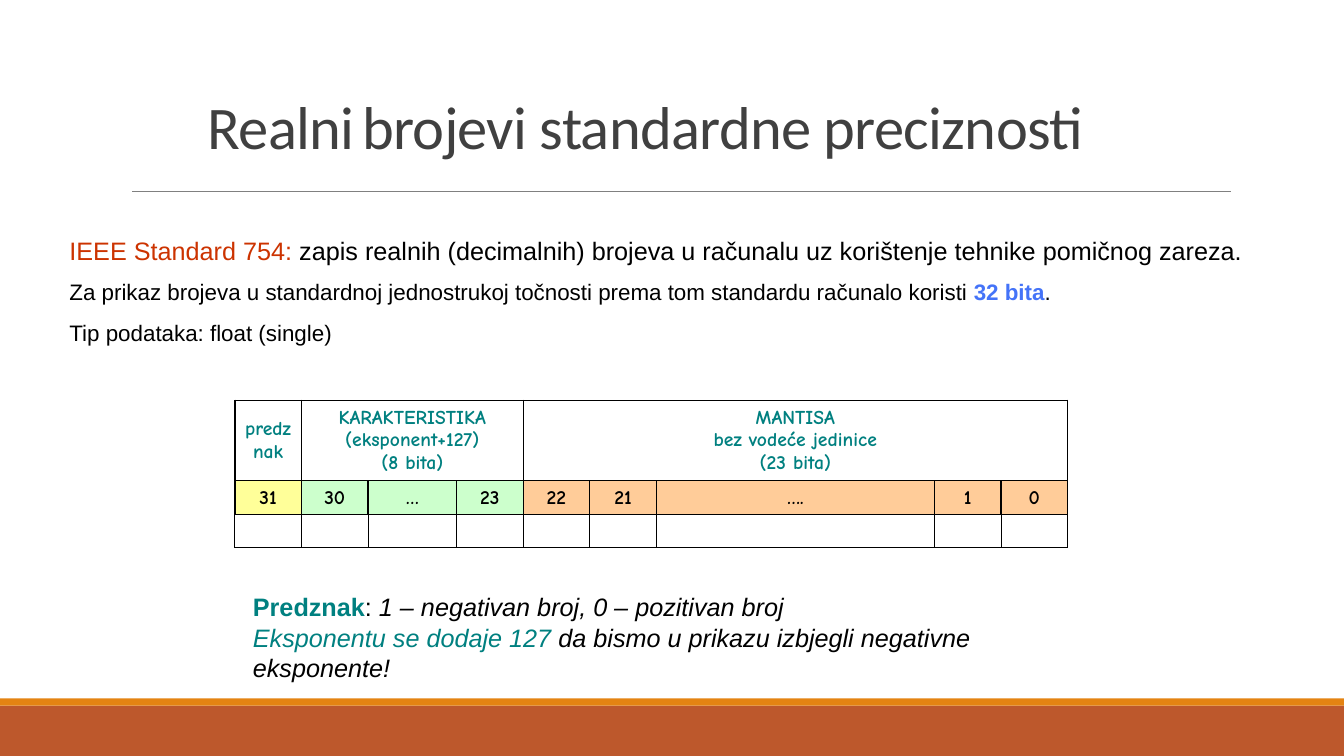
from lxml.etree import SubElement
from pptx import Presentation
from pptx.dml.color import RGBColor
from pptx.enum.shapes import MSO_CONNECTOR as Connector, MSO_SHAPE as Shape
from pptx.enum.text import MSO_ANCHOR as Anchor, MSO_AUTO_SIZE as AutoSize, PP_ALIGN as Align
from pptx.oxml.ns import qn
from pptx.util import Inches, Pt

COLORS = {
    "rust": "BD582C", "orange": "E48312", "rule": "808080", "title": "404040",
    "black": "000000", "red": "CC3300", "blue": "4473F8", "teal": "008080",
    "sign": "FFFF99", "exponent": "CCFFCC", "mantissa": "FFCC99",
}


def rgb(name):
    """Look up a named colour."""
    return RGBColor.from_string(COLORS[name])


def add_run(paragraph, text, size=18, color="black", font="Arial", bold=False, italic=False, spacing=None):
    """Append formatted text to a paragraph."""
    run = paragraph.add_run()
    run.text = text
    run.font.size, run.font.name = Pt(size), font
    run.font.bold, run.font.italic = bold, italic
    run.font.color.rgb = rgb(color)
    if spacing is not None:
        run._r.get_or_add_rPr().set("spc", str(round(spacing * 100)))


class SlideBuilder:
    """Holds the current slide and its style."""

    def __init__(self, slide):
        """Keep the slide to draw on."""
        self.slide = slide

    def fill_text(self, frame, paragraphs, align=Align.LEFT, line_spacing=None):
        """Write paragraphs, each a list of (text, format) pairs."""
        for index, runs in enumerate(paragraphs):
            paragraph = frame.add_paragraph() if index else frame.paragraphs[0]
            paragraph.alignment = align
            if line_spacing:
                paragraph.line_spacing = line_spacing
            for text, style in runs:
                add_run(paragraph, text, **style)

    def title(self, box, runs):
        """Place and fill the title placeholder."""
        heading = self.slide.shapes.title
        heading.left, heading.top, heading.width, heading.height = map(Inches, box)
        frame = heading.text_frame
        frame.auto_size, frame.vertical_anchor = AutoSize.NONE, Anchor.BOTTOM
        self.fill_text(frame, [runs], line_spacing=0.85)

    def text(self, box, paragraphs, **layout):
        """Add a wrapped text box."""
        frame = self.slide.shapes.add_textbox(*map(Inches, box)).text_frame
        frame.word_wrap, frame.vertical_anchor = True, Anchor.TOP
        frame.margin_top = Inches(0.09)
        self.fill_text(frame, paragraphs, **layout)

    def bar(self, top, height, color):
        """Add a band across the full slide width."""
        band = self.slide.shapes.add_shape(Shape.RECTANGLE, 0, Inches(top), Inches(13.33), Inches(height))
        band.shadow.inherit = False
        band.fill.solid()
        band.fill.fore_color.rgb = rgb(color)
        band.line.fill.background()

    def rule(self, left, right, top):
        """Add a thin horizontal line."""
        line = self.slide.shapes.add_connector(
            Connector.STRAIGHT, Inches(left), Inches(top), Inches(right), Inches(top))
        line.line.color.rgb, line.line.width = rgb("rule"), Pt(0.5)
        SubElement(line._element.spPr, qn("a:effectLst"))

    def table(self, box, widths, heights):
        """Add a plain table with black borders."""
        frame = self.slide.shapes.add_table(len(heights), len(widths), *map(Inches, box))
        grid = frame.table
        grid.first_row = grid.horz_banding = False
        for column, width in zip(grid.columns, widths):
            column.width = Inches(width)
        for row, height in zip(grid.rows, heights):
            row.height = Inches(height)
        for row_index in range(len(heights)):
            for column_index in range(len(widths)):
                cell = grid.cell(row_index, column_index)
                self.border(cell, 0.75 if row_index == 2 else 1)
                cell.fill.background()
                cell.vertical_anchor = Anchor.MIDDLE
        return grid

    def border(self, cell, width):
        """Draw all four sides of a cell."""
        properties = cell._tc.get_or_add_tcPr()
        for side in ("a:lnL", "a:lnR", "a:lnT", "a:lnB"):
            line = SubElement(properties, qn(side), w=str(Pt(width)))
            SubElement(SubElement(line, qn("a:solidFill")), qn("a:srgbClr"), val=COLORS["black"])

    def cell(self, cell, lines, text_color="black", fill=None):
        """Write centred lines into a table cell."""
        style = {"size": 14, "font": "Comic Neue", "color": text_color, "bold": True}
        self.fill_text(cell.text_frame, [[(line, style)] for line in lines], Align.CENTER)
        if fill:
            cell.fill.solid()
            cell.fill.fore_color.rgb = rgb(fill)


def main():
    """Build and save the slide."""
    deck = Presentation()
    deck.slide_width, deck.slide_height = Inches(13.33), Inches(7.5)
    page = SlideBuilder(deck.slides.add_slide(deck.slide_layouts[5]))

    page.bar(7, 0.5, "rust")
    page.bar(6.93, 0.07, "orange")
    page.rule(1.31, 12.21, 1.9)

    heading = {"size": 43.2, "font": "Calibri", "color": "title", "spacing": -0.5}
    page.title((1.96, 0.58, 9.25, 1.08), [
        ("Realni", heading),
        (" ", {**heading, "size": 25.2}),
        ("brojevi standardne preciznosti", heading),
    ])

    page.text((0.59, 2.09, 11.99, 1.77), [
        [("IEEE Standard 754: ", {"color": "red"}),
         ("zapis realnih (decimalnih) brojeva u računalu uz korištenje tehnike pomičnog zareza.", {})],
        [("Za prikaz brojeva u standardnoj jednostrukoj točnosti prema tom standardu računalo koristi ",
          {"size": 16}),
         ("32 bita", {"size": 16, "color": "blue", "bold": True}),
         (".", {"size": 16})],
        [("Tip podataka: float (single)", {"size": 16})],
    ], line_spacing=1.5)

    widths = [0.66, 0.66, 0.88, 0.66, 0.66, 0.66, 2.76, 0.66, 0.66]
    bits = page.table((2.33, 3.97, 8.27, 1.47), widths, [0.8, 0.33, 0.33])
    fields = [
        ("sign", ["predznak"], ["31"]),
        ("exponent", ["KARAKTERISTIKA", "(eksponent+127)", "(8 bita)"], ["30", "…", "23"]),
        ("mantissa", ["MANTISA", "bez vodeće jedinice", "(23 bita)"], ["22", "21", "….", "1", "0"]),
    ]
    column = 0
    for fill, label, positions in fields:
        header = bits.cell(0, column)
        if len(positions) > 1:
            header.merge(bits.cell(0, column + len(positions) - 1))
        page.cell(header, label, "teal")
        for position in positions:
            page.cell(bits.cell(1, column), [position], fill=fill)
            value = bits.cell(2, column)
            value.margin_top = value.margin_bottom = 0
            column += 1

    page.text((2.41, 5.78, 8.35, 1.34), [
        [("Predznak", {"color": "teal", "bold": True}),
         (": ", {}),
         ("1 – negativan broj, 0 – pozitivan broj", {"italic": True})],
        [("Eksponentu se dodaje 127", {"color": "teal", "italic": True}),
         (" da bismo u prikazu izbjegli negativne eksponente!", {"italic": True})],
    ])
    deck.save("out.pptx")


if __name__ == "__main__":
    main()
